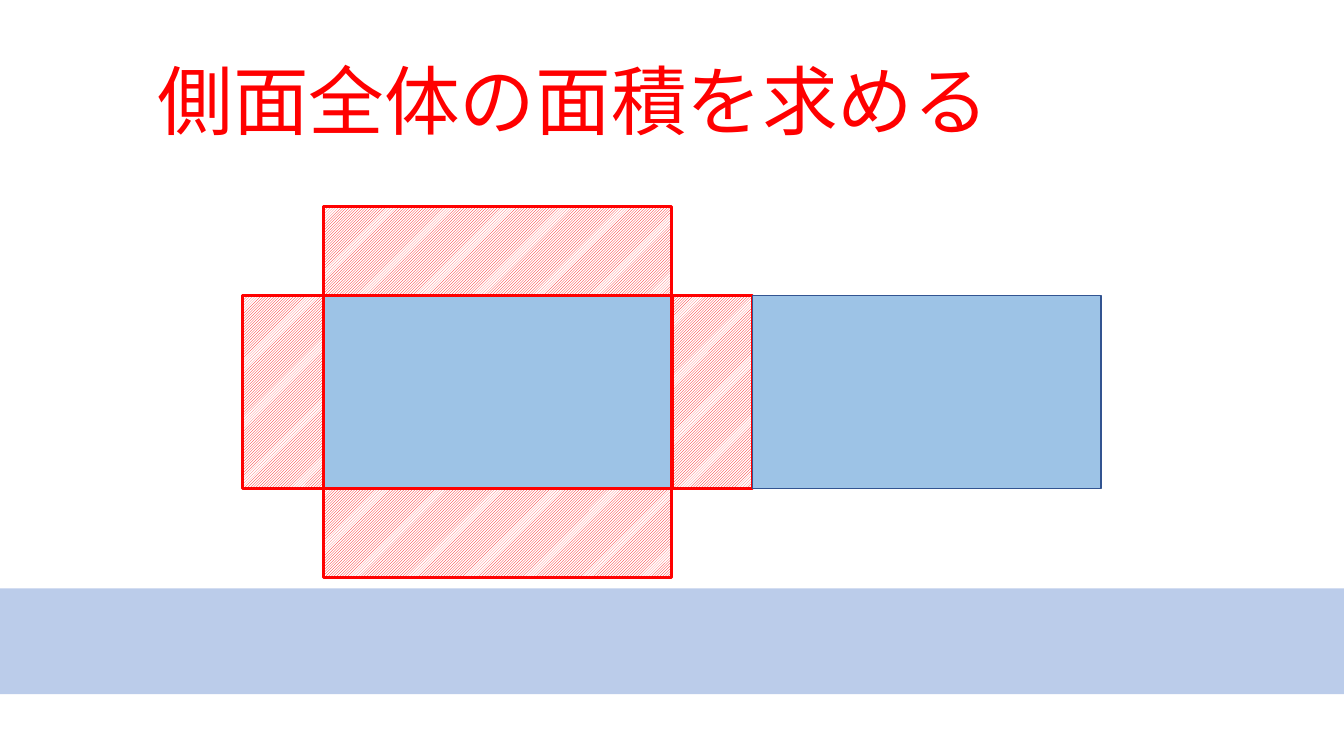
from dataclasses import dataclass

from lxml import etree
from pptx import Presentation
from pptx.dml.color import RGBColor
from pptx.enum.dml import MSO_PATTERN
from pptx.enum.shapes import MSO_SHAPE
from pptx.enum.text import MSO_ANCHOR, PP_ALIGN
from pptx.oxml.ns import qn
from pptx.util import Pt

RECTANGLE = MSO_SHAPE.RECTANGLE
HATCH = MSO_PATTERN.LIGHT_UPWARD_DIAGONAL
CENTER = PP_ALIGN.CENTER
MIDDLE = MSO_ANCHOR.MIDDLE


@dataclass(frozen=True)
class Theme:
    white: str = "FFFFFF"
    accent: str = "FF0000"
    face: str = "9DC3E6"
    face_edge: str = "325491"
    band: str = "8FAADC"
    font: str = "Noto Sans CJK JP"
    title_size: float = 54
    thin: float = 1
    thick: float = 2.25


THEME = Theme()
PAGE_WIDTH, PAGE_HEIGHT = 960, 540


def color(value):
    return RGBColor.from_string(value)


def add_rectangle(page, left, top, width, height, fill=None, edge=None, weight=THEME.thin):
    box = page.shapes.add_shape(RECTANGLE, Pt(left), Pt(top), Pt(width), Pt(height))
    box.shadow.inherit = False
    if fill:
        box.fill.solid()
        box.fill.fore_color.rgb = color(fill)
    if edge:
        box.line.color.rgb = color(edge)
        box.line.width = Pt(weight)
    else:
        box.line.fill.background()
    return box


def add_hatched_side(page, left, top, width, height):
    box = add_rectangle(page, left, top, width, height, edge=THEME.accent, weight=THEME.thick)
    box.fill.patterned()
    box.fill.pattern = HATCH
    box.fill.fore_color.rgb = color(THEME.accent)
    box.fill.back_color.rgb = color(THEME.white)


def set_opacity(box, percent):
    tint = box.fill._xPr.find(qn("a:solidFill"))[0]
    etree.SubElement(tint, qn("a:alpha")).set("val", str(percent * 1000))


def write_text(box, text, size, ink, font, align=CENTER, anchor=MIDDLE):
    frame = box.text_frame
    frame.word_wrap = True
    frame.vertical_anchor = anchor
    para = frame.paragraphs[0]
    para.alignment = align
    span = para.add_run()
    span.text = text
    span.font.size = Pt(size)
    span.font.color.rgb = color(ink)
    span.font.name = font
    east_asian = etree.SubElement(span.font._element, qn("a:ea"))
    east_asian.set("typeface", font)


def add_box_net(page, left, top, length, height, side_depth, flap_depth):
    right, bottom = left + length, top + height
    # Front face
    add_rectangle(page, left, top, length, height, THEME.face, THEME.face_edge)
    # Left and right sides
    for side_left in (left - side_depth, right):
        add_hatched_side(page, side_left, top, side_depth, height)
    # Back face
    add_rectangle(page, right + side_depth, top, length, height, THEME.face, THEME.face_edge)
    # Upper and lower sides
    for flap_top in (top - flap_depth, bottom):
        add_hatched_side(page, left, flap_top, length, flap_depth)


def main():
    deck = Presentation()
    deck.slide_width, deck.slide_height = Pt(PAGE_WIDTH), Pt(PAGE_HEIGHT)
    page = deck.slides.add_slide(deck.slide_layouts[6])

    # Title
    title = add_rectangle(page, 82, 34.5, 655, 73, THEME.white)
    write_text(title, "側面全体の面積を求める", THEME.title_size, THEME.accent, THEME.font)

    # Band across the page
    band = add_rectangle(page, 0, 420.3, PAGE_WIDTH, 75.5, THEME.band)
    set_opacity(band, 60)

    # Unfolded box
    add_box_net(page, left=231, top=211, length=249, height=138,
                side_depth=57.5, flap_depth=63.4)

    deck.save("out.pptx")


if __name__ == "__main__":
    main()
